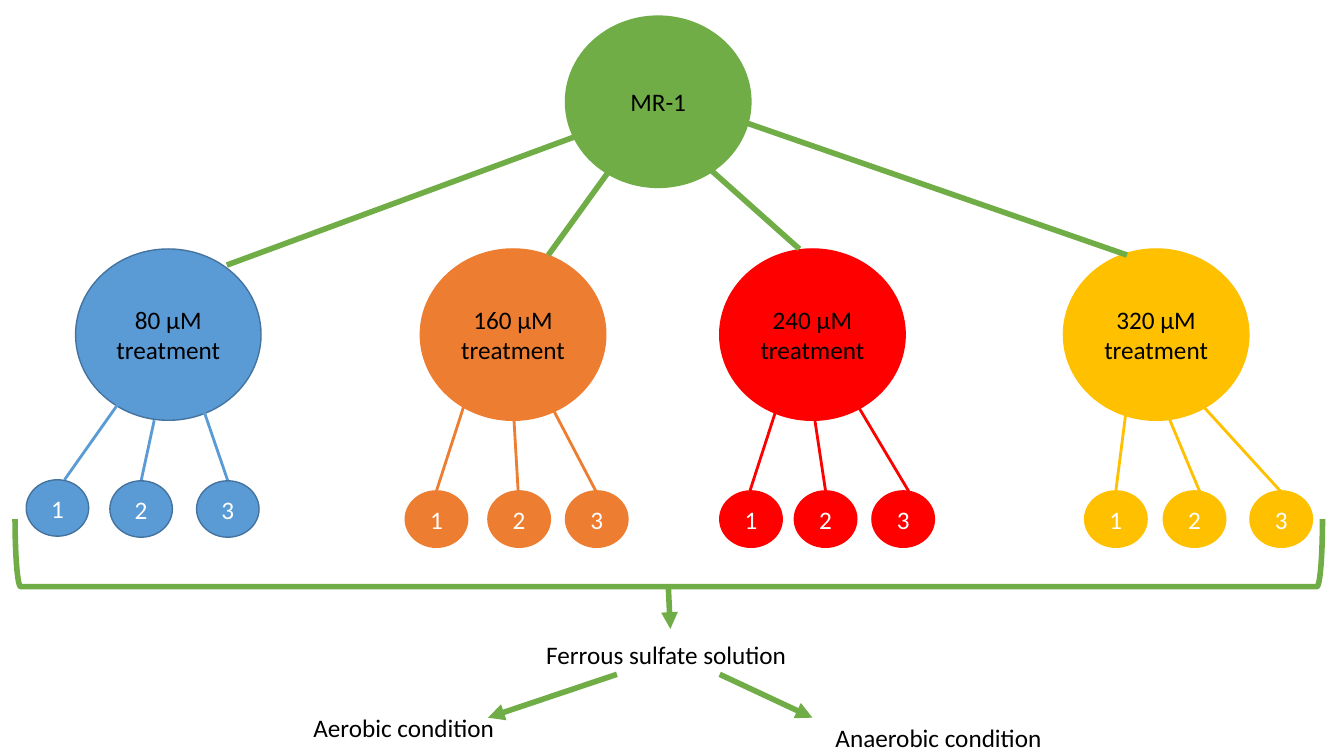
from lxml import etree
from pptx import Presentation
from pptx.dml.color import RGBColor
from pptx.enum.shapes import MSO_CONNECTOR as Connector, MSO_SHAPE as Shape
from pptx.enum.text import MSO_ANCHOR as Anchor, MSO_AUTO_SIZE as AutoSize, PP_ALIGN as Align
from pptx.oxml.ns import qn
from pptx.util import Inches, Pt

COLORS = {
    "green": "70AD47", "blue": "5B9BD5", "navy": "43739E", "orange": "ED7D31",
    "red": "FF0000", "yellow": "FFC000", "black": "000000", "white": "FFFFFF",
}
# The grid has 75 rows; its square cells give 133.33 columns
COLUMNS, ROWS = 133.33, 75
CELL = Inches(7.5) / ROWS

CULTURE_SIZE = (18.4, 17)
REPLICATE_SIZE = (6.2, 5.6)
TREATMENT_ROW = 24.7

# Each treatment: label, fill, outline, left column, spoke from the culture (start, end),
# and replicates (left, top, branch start, branch end)
TREATMENTS = [
    ("80 µM treatment", "blue", "navy", 7.5, ((58.3, 13.1), (22.5, 26.3)), [
        (2.6, 47.6, (11.7, 40.1), (6.4, 47.6)),
        (10.9, 47.7, (15.3, 41.7), (14, 47.7)),
        (19.5, 47.7, (20, 40.1), (22.6, 47.7))]),
    ("160 µM treatment", "orange", "orange", 41.7, ((61.2, 15.9), (54.4, 25.3)), [
        (40.2, 48.7, (46.4, 39.1), (43.3, 48.7)),
        (48.4, 48.7, (50.9, 40.1), (51.5, 50.4)),
        (56.1, 48.7, (54.6, 40.1), (59.1, 48.7))]),
    ("240 µM treatment", "red", "red", 71.4, ((69.1, 15.6), (79.3, 24.7)), [
        (71.4, 48.7, (77.5, 39.1), (74.4, 48.7)),
        (78.8, 48.7, (80.6, 40.1), (81.9, 48.7)),
        (86.5, 48.7, (85, 40.1), (91.2, 50.5))]),
    ("320 µM treatment", "yellow", "yellow", 105.5, ((73.2, 11.9), (111.8, 25.3)), [
        (107.6, 48.7, (111.8, 40.1), (110.7, 48.7)),
        (115.4, 48.7, (115.4, 40.1), (119.7, 50.4)),
        (124, 48.7, (118.9, 39.8), (127, 48.7))]),
]

ARROWS = [((66.3, 58.2), (66.5, 62.4)), ((61.2, 66.9), (48.4, 71.2)), ((71.4, 66.9), (80.6, 71.2))]

# Text, position, width, wrapping
CAPTIONS = [
    ("Ferrous sulfate solution", (53.2, 62.9), 27.4, True),
    ("Aerobic condition", (30.1, 70.2), 20.2, False),
    ("Anaerobic condition", (81.9, 71.2), 22.7, False),
]


def grid(*cells):
    return [round(cell * CELL) for cell in cells]


def color(name):
    return RGBColor.from_string(COLORS[name])


class Diagram:
    font, size = "Calibri", 18

    def __init__(self, presentation):
        self.slide = presentation.slides.add_slide(presentation.slide_layouts[6])

    def label(self, shape, text, text_color, align):
        paragraph = shape.text_frame.paragraphs[0]
        paragraph.text = text
        paragraph.alignment = align
        font = paragraph.runs[0].font
        font.name, font.size = self.font, Pt(self.size)
        font.color.rgb = color(text_color)

    def circle(self, text, position, size, fill, outline, text_color="black"):
        shape = self.slide.shapes.add_shape(Shape.OVAL, *grid(*position, *size))
        shape.shadow.inherit = False
        shape.fill.solid()
        shape.fill.fore_color.rgb = color(fill)
        shape.line.color.rgb = color(outline)
        shape.line.width = Pt(1)
        shape.text_frame.word_wrap = True
        shape.text_frame.vertical_anchor = Anchor.MIDDLE
        self.label(shape, text, text_color, Align.CENTER)

    def line(self, start, end, line_color="green", width=4, arrow=False):
        connector = self.slide.shapes.add_connector(Connector.STRAIGHT, *grid(*start, *end))
        connector.line.color.rgb = color(line_color)
        connector.line.width = Pt(width)
        properties = connector._element.spPr
        if arrow:
            etree.SubElement(properties.find(qn("a:ln")), qn("a:tailEnd"), type="triangle")
        etree.SubElement(properties, qn("a:effectLst"))

    def bracket(self, position, size):
        shape = self.slide.shapes.add_shape(Shape.LEFT_BRACKET, *grid(*position, *size))
        shape.shadow.inherit = False
        shape.rotation = 270
        shape.fill.background()
        shape.line.color.rgb = color("green")
        shape.line.width = Pt(4)

    def caption(self, text, position, width, wrap):
        shape = self.slide.shapes.add_textbox(*grid(*position, width, 4))
        shape.text_frame.word_wrap = wrap
        shape.text_frame.auto_size = AutoSize.SHAPE_TO_FIT_TEXT
        self.label(shape, text, "black", Align.LEFT)


def main():
    presentation = Presentation()
    presentation.slide_width, presentation.slide_height = grid(COLUMNS, ROWS)
    diagram = Diagram(presentation)

    # Starting culture
    diagram.circle("MR-1", (56.1, 1.6), CULTURE_SIZE, "green", "green")

    # Treatments with their replicates
    for label, fill, outline, left, spoke, replicates in TREATMENTS:
        diagram.circle(label, (left, TREATMENT_ROW), CULTURE_SIZE, fill, outline)
        diagram.line(*spoke)
        for number, (column, row, start, end) in enumerate(replicates, 1):
            diagram.line(start, end, fill, 2)
            diagram.circle(str(number), (column, row), REPLICATE_SIZE, fill, outline, "white")

    # Shared solution and the two conditions
    diagram.bracket((63, -10), (6.7, 129.7))
    for start, end in ARROWS:
        diagram.line(start, end, arrow=True)
    for caption in CAPTIONS:
        diagram.caption(*caption)

    presentation.save("out.pptx")


if __name__ == "__main__":
    main()
